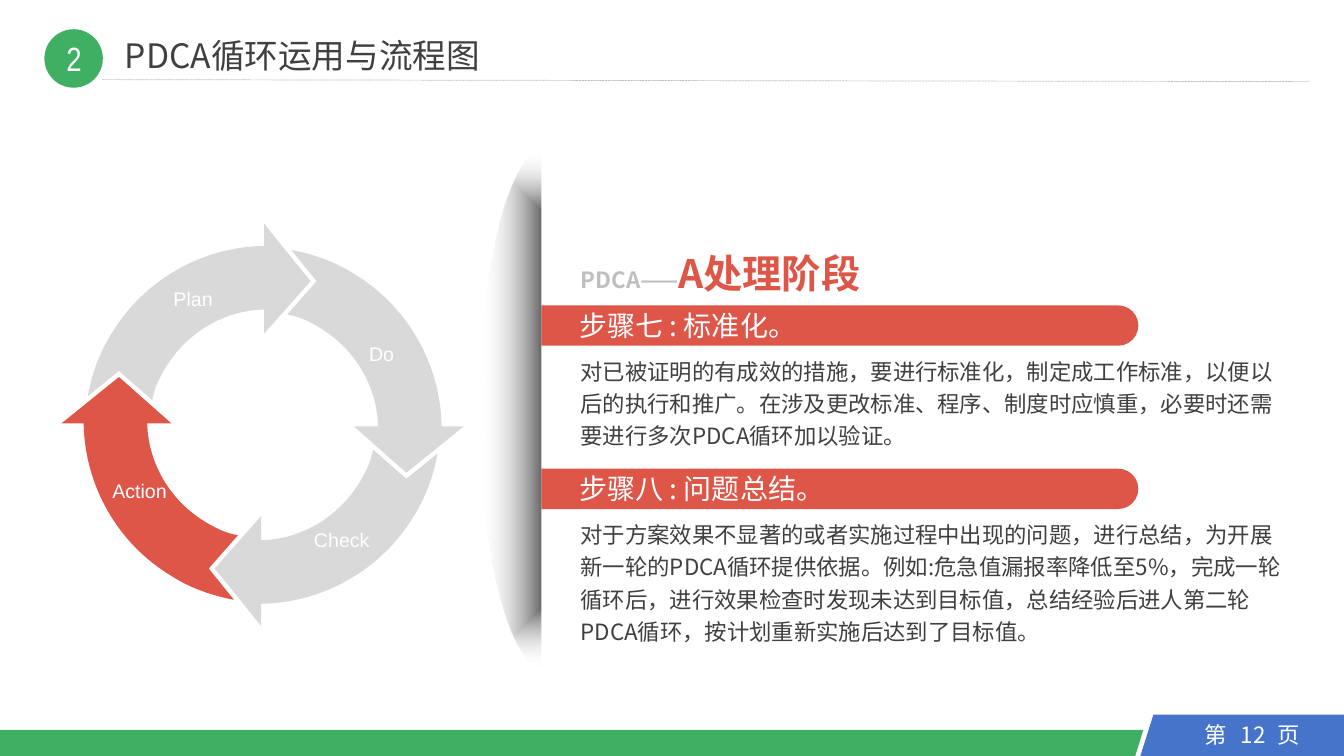
from lxml import etree
from pptx import Presentation
from pptx.dml.color import RGBColor
from pptx.enum.dml import MSO_LINE
from pptx.enum.shapes import MSO_CONNECTOR, MSO_SHAPE
from pptx.enum.text import MSO_ANCHOR, MSO_AUTO_SIZE, PP_ALIGN
from pptx.oxml import parse_xml
from pptx.oxml.ns import qn
from pptx.util import Inches, Pt

COLORS = {
    "green": "3FAF63", "blue": "4674CA", "red": "DE5647", "white": "FFFFFF",
    "pale": "D9D9D9", "silver": "BFBFBF", "text": "404040", "shade": "595959",
}
CJK = "Noto Sans CJK SC"


def paint(shape, color):
    """Give a shape a plain fill with no line and no shadow."""
    shape.shadow.inherit = False
    shape.fill.solid()
    shape.fill.fore_color.rgb = RGBColor.from_string(COLORS[color])
    shape.line.fill.background()


def write(shape, runs, align=PP_ALIGN.LEFT, font=CJK, wrap=True):
    """Fill a shape with one paragraph of (text, size, color, bold) runs."""
    shape.text_frame.word_wrap = wrap
    paragraph = shape.text_frame.paragraphs[0]
    paragraph.alignment = align
    for text, size, color, bold in runs:
        run = paragraph.add_run()
        run.text = text
        run.font.size = Pt(size)
        run.font.bold = bold
        run.font.color.rgb = RGBColor.from_string(COLORS[color])
        run.font.name = font
        etree.SubElement(run.font._element, qn("a:ea"), typeface=font)
    return paragraph


presentation = Presentation()
presentation.slide_width, presentation.slide_height = Inches(13.33), Inches(7.5)
slide = presentation.slides.add_slide(presentation.slide_layouts[6])
shapes = slide.shapes

# Footer band and page number
footer_bands = [
    ("green", [(0, 7.5), (11.26, 7.5), (11.34, 7.24), (0, 7.24)]),
    ("blue", [(11.44, 7.09), (11.31, 7.5), (13.33, 7.5), (13.33, 7.09)]),
]
for color, corners in footer_bands:
    points = [(Inches(x), Inches(y)) for x, y in corners]
    builder = shapes.build_freeform(*points[0])
    builder.add_line_segments(points[1:])
    paint(builder.convert_to_shape(), color)

for text, center in [("第", 12.06), ("12", 12.43), ("页", 12.78)]:
    box = shapes.add_textbox(Inches(center - 0.25), Inches(7.11), Inches(0.5), Inches(0.37))
    write(box, [(text, 16, "white", False)], PP_ALIGN.CENTER)

# Curved shadow at the left edge of the text panel
shadow = shapes.add_shape(MSO_SHAPE.OVAL, Inches(4.77), Inches(1.49), Inches(1.26), Inches(5.13))
paint(shadow, "shade")
solid = shadow._element.spPr.find(qn("a:solidFill"))
gradient = parse_xml(
    '<a:gradFill xmlns:a="http://schemas.openxmlformats.org/drawingml/2006/main" rotWithShape="1">'
    f'<a:gsLst><a:gs pos="0"><a:srgbClr val="{COLORS["shade"]}"/></a:gs>'
    f'<a:gs pos="100000"><a:srgbClr val="{COLORS["white"]}"><a:alpha val="0"/></a:srgbClr></a:gs></a:gsLst>'
    '<a:path path="shape"><a:fillToRect l="50000" t="50000" r="50000" b="50000"/></a:path></a:gradFill>'
)
solid.getparent().replace(solid, gradient)
panel = shapes.add_shape(MSO_SHAPE.RECTANGLE, Inches(5.37), Inches(1.14), Inches(0.74), Inches(6.04))
paint(panel, "white")

# Cycle: one arrow outline, turned by quarter turns. A step of three points is a curve.
arrow = [
    [(2.62, 2.22)], [(3.08, 2.79)], [(2.62, 3.31)], [(2.62, 3.07)],
    [(2.22, 3.08), (1.85, 3.3), (1.64, 3.65)],
    [(1.58, 3.75), (1.53, 3.85), (1.51, 3.97)],
    [(1.18, 3.68)], [(0.87, 3.93)],
    [(0.91, 3.72), (0.98, 3.51), (1.1, 3.32)],
    [(1.42, 2.78), (2, 2.45), (2.62, 2.44)],
]
cycle_steps = [
    ("Plan", "pale", (0.39, 0, 0.51, 0.31)),
    ("Do", "pale", (0.24, 0, 0.12, 0.2)),
    ("Check", "pale", (0.31, 0, 0, 0)),
    ("Action", "red", (0, 0, 0.2, 0)),
]
for label, color, insets in cycle_steps:
    ends = [(Inches(step[-1][0]), Inches(step[-1][1])) for step in arrow]
    builder = shapes.build_freeform(*ends[0])
    builder.add_line_segments(ends[1:])
    shape = builder.convert_to_shape()
    segments = list(shape._element.iter(qn("a:lnTo")))
    for segment, step in zip(segments, arrow[1:]):
        if len(step) == 3:
            curve = etree.Element(qn("a:cubicBezTo"))
            for x, y in step:
                etree.SubElement(curve, qn("a:pt"), x=str(Inches(x) - shape.left), y=str(Inches(y) - shape.top))
            segment.getparent().replace(segment, curve)
    paint(shape, color)
    frame = shape.text_frame
    frame.vertical_anchor = MSO_ANCHOR.MIDDLE
    frame.margin_left, frame.margin_top, frame.margin_right, frame.margin_bottom = map(Inches, insets)
    paragraph = write(shape, [(label, 14, "white", False)], PP_ALIGN.CENTER, "Arial")
    paragraph.line_spacing = 1.2
    paragraph.space_before = paragraph.space_after = Pt(4.5)
    arrow = [[(6.82 - y, 1.61 + x) for x, y in step] for step in arrow]

# Stage heading and its two steps
stage = shapes.add_textbox(Inches(5.66), Inches(2.42), Inches(3.19), Inches(0.57))
write(stage, [("PDCA——", 16, "silver", True), ("A处理阶段", 28, "red", True)], wrap=False)

stage_steps = [
    (3.03, 1.07, "　步骤七 : 标准化。",
     "对已被证明的有成效的措施，要进行标准化，制定成工作标准，以便以后的执行和推广。"
     "在涉及更改标准、程序、制度时应慎重，必要时还需要进行多次PDCA循环加以验证。"),
    (4.65, 1.37, "　步骤八 : 问题总结。",
     "对于方案效果不显著的或者实施过程中出现的问题，进行总结，为开展新一轮的PDCA循环提供依据。"
     "例如:危急值漏报率降低至5%，完成一轮循环后，进行效果检查时发现未达到目标值，"
     "总结经验后进人第二轮PDCA循环，按计划重新实施后达到了目标值。"),
]
for top, body_height, heading, body in stage_steps:
    bar = shapes.add_shape(MSO_SHAPE.ROUND_2_SAME_RECTANGLE, Inches(8.13), Inches(top - 2.76),
                           Inches(0.4), Inches(5.92))
    bar.rotation = 90
    bar.adjustments[0], bar.adjustments[1] = 0.5, 0
    paint(bar, "red")
    heading_box = shapes.add_textbox(Inches(5.37), Inches(top - 0.02), Inches(4.04), Inches(0.44))
    write(heading_box, [(heading, 20, "white", False)])
    body_box = shapes.add_textbox(Inches(5.66), Inches(top + 0.42), Inches(7.24), Inches(body_height))
    write(body_box, [(body, 16, "text", False)]).line_spacing = 1.2

# Slide title
badge = shapes.add_shape(MSO_SHAPE.OVAL, Inches(0.44), Inches(0.29), Inches(0.58), Inches(0.58))
paint(badge, "green")
title_texts = [
    ("2", 0.56, 0.33, 0.37, "white", "Arial Narrow"),
    ("PDCA循环运用与流程图", 1.14, 0.3, 3.82, "text", CJK),
]
for text, left, top, width, color, font in title_texts:
    box = shapes.add_textbox(Inches(left), Inches(top), Inches(width), Inches(0.5))
    write(box, [(text, 24, color, False)], font=font, wrap=False)
    box.text_frame.auto_size = MSO_AUTO_SIZE.SHAPE_TO_FIT_TEXT

rule = shapes.add_connector(MSO_CONNECTOR.STRAIGHT, Inches(1.01), Inches(0.79), Inches(12.99), Inches(0.81))
rule.line.color.rgb = RGBColor.from_string(COLORS["silver"])
rule.line.width = Pt(0.5)
rule.line.dash_style = MSO_LINE.SQUARE_DOT
etree.SubElement(rule._element.spPr, qn("a:effectLst"))

presentation.save("out.pptx")
